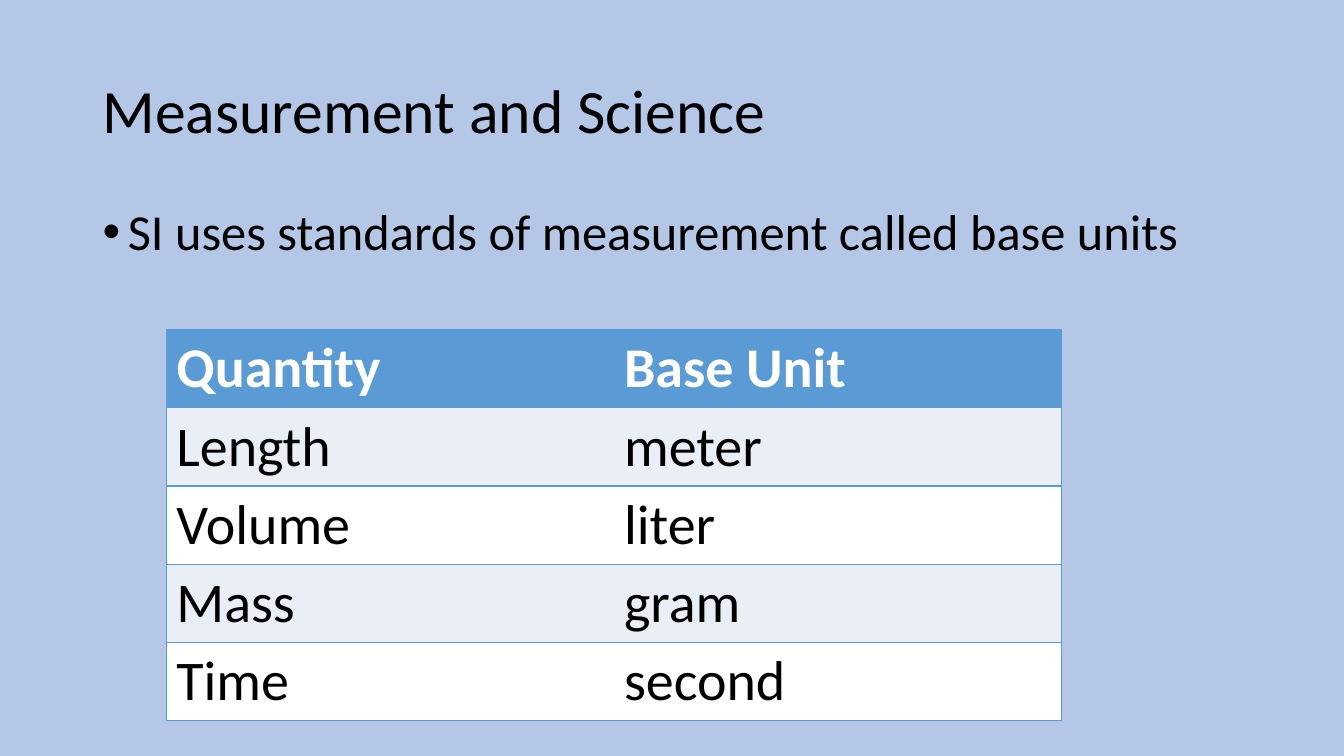
from lxml.etree import SubElement
from pptx import Presentation
from pptx.dml.color import RGBColor
from pptx.enum.text import MSO_ANCHOR
from pptx.oxml.ns import qn
from pptx.util import Inches, Pt

BACKGROUND = RGBColor(0xB4, 0xC7, 0xE7)
BLUE = RGBColor(0x5B, 0x9B, 0xD5)
PALE_BLUE = RGBColor(0xEA, 0xEF, 0xF7)
WHITE = RGBColor(0xFF, 0xFF, 0xFF)
BLACK = RGBColor(0x00, 0x00, 0x00)
FONT = "Calibri"

# Boxes: left, top, width, height in inches
TITLE_BOX = (0.92, 0.4, 11.5, 1.45)
BODY_BOX = (0.92, 2, 11.5, 1)
TABLE_BOX = (1.65, 3.27, 8.88, 3.88)

BASE_UNITS = [
    ("Quantity", "Base Unit"),
    ("Length", "meter"),
    ("Volume", "liter"),
    ("Mass", "gram"),
    ("Time", "second"),
]


def write_text(text_frame, text, size, color, bold=False):
    text_frame.text = text
    paragraph = text_frame.paragraphs[0]
    font = paragraph.runs[0].font
    font.name, font.size, font.bold = FONT, Pt(size), bold
    font.color.rgb = color
    return paragraph


def add_text(slide, box, text, size, anchor):
    text_frame = slide.shapes.add_textbox(*map(Inches, box)).text_frame
    text_frame.word_wrap = True
    text_frame.vertical_anchor = anchor
    paragraph = write_text(text_frame, text, size, BLACK)
    paragraph.line_spacing = 0.9
    return paragraph


def add_title(slide, box, text):
    add_text(slide, box, text, 44, MSO_ANCHOR.MIDDLE)


def add_bullet(slide, box, text):
    paragraph = add_text(slide, box, text, 36, MSO_ANCHOR.TOP)
    paragraph.space_before = Pt(10)
    properties = paragraph._p.get_or_add_pPr()
    properties.set("marL", str(Inches(0.25)))
    properties.set("indent", str(-Inches(0.25)))
    SubElement(properties, qn("a:buFont"), typeface="Arial")
    SubElement(properties, qn("a:buChar"), char="•")


def set_borders(cell, visible_sides):
    properties = cell._tc.get_or_add_tcPr()
    # Border lines come before the fill in the cell properties
    for position, side in enumerate(("lnL", "lnR", "lnT", "lnB")):
        line = SubElement(properties, qn(f"a:{side}"), w=str(Pt(1)))
        properties.insert(position, line)
        if side in visible_sides:
            fill = SubElement(line, qn("a:solidFill"))
            SubElement(fill, qn("a:srgbClr"), val=str(BLUE))
        else:
            SubElement(line, qn("a:noFill"))


def add_unit_table(slide, box, rows):
    row_count, column_count = len(rows), len(rows[0])
    table = slide.shapes.add_table(row_count, column_count, *map(Inches, box)).table
    for row_index, row in enumerate(rows):
        is_header = row_index == 0
        row_fill = BLUE if is_header else (WHITE, PALE_BLUE)[row_index % 2]
        for column_index, text in enumerate(row):
            cell = table.cell(row_index, column_index)
            cell.fill.solid()
            cell.fill.fore_color.rgb = row_fill
            write_text(cell.text_frame, text, 40, WHITE if is_header else BLACK, is_header)
            # Horizontal rules everywhere, vertical ones only at the outer edges
            sides = ["lnT", "lnB"]
            if column_index == 0:
                sides.append("lnL")
            if column_index == column_count - 1:
                sides.append("lnR")
            set_borders(cell, sides)


def main():
    presentation = Presentation()
    presentation.slide_width, presentation.slide_height = Inches(13.33), Inches(7.5)
    slide = presentation.slides.add_slide(presentation.slide_layouts[6])
    slide.background.fill.solid()
    slide.background.fill.fore_color.rgb = BACKGROUND

    add_title(slide, TITLE_BOX, "Measurement and Science")
    add_bullet(slide, BODY_BOX, "SI uses standards of measurement called base units")
    add_unit_table(slide, TABLE_BOX, BASE_UNITS)
    presentation.save("out.pptx")


if __name__ == "__main__":
    main()
